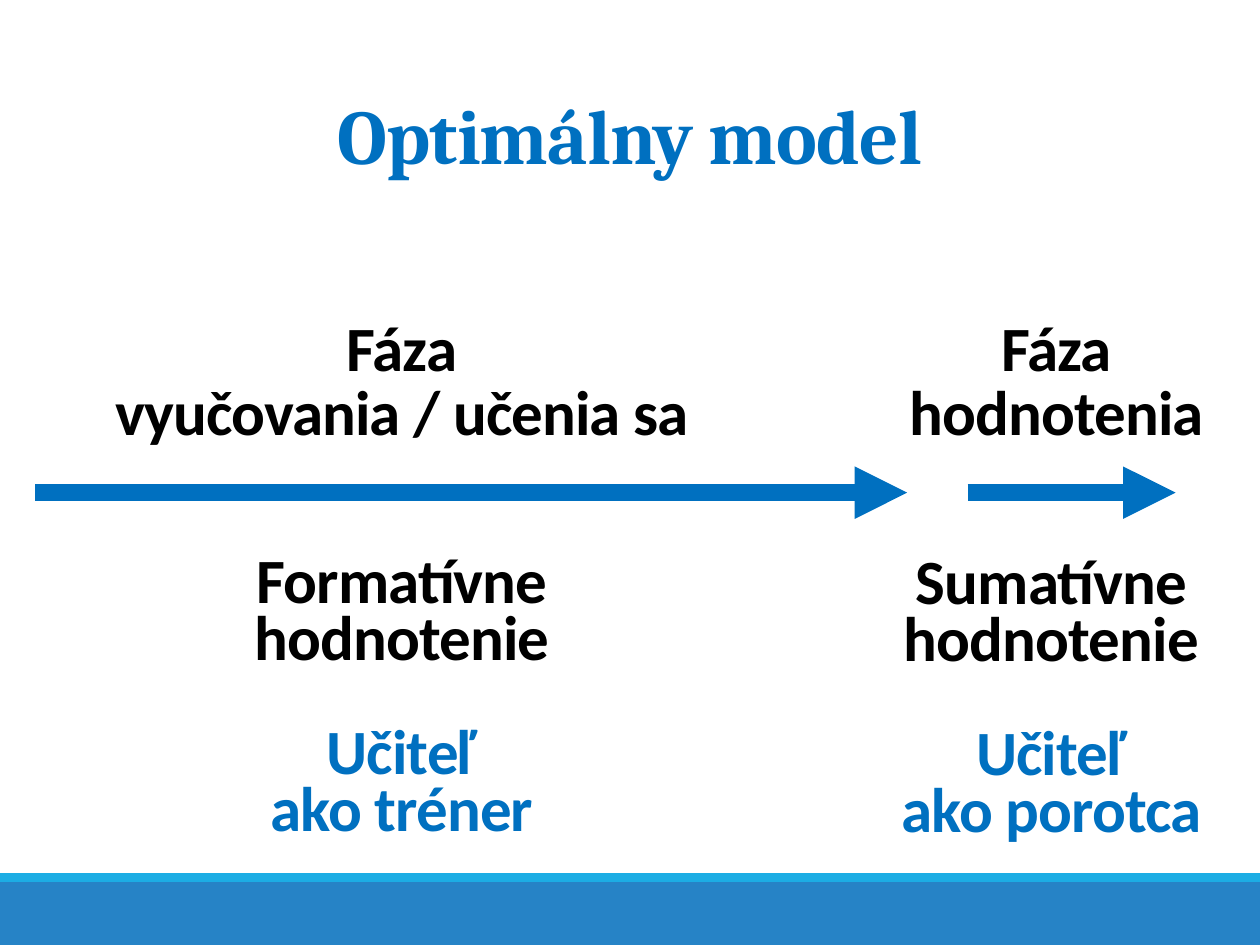
from lxml import etree
from pptx import Presentation
from pptx.dml.color import RGBColor
from pptx.enum.shapes import MSO_CONNECTOR, MSO_SHAPE
from pptx.enum.text import MSO_ANCHOR, PP_ALIGN
from pptx.oxml.ns import qn
from pptx.util import Inches, Pt

RECTANGLE = MSO_SHAPE.RECTANGLE
STRAIGHT = MSO_CONNECTOR.STRAIGHT
TOP = MSO_ANCHOR.TOP
CENTER = PP_ALIGN.CENTER

COLORS = {"accent": "0070C0", "text": "000000", "footer": "2683C6", "stripe": "1CADE4"}
COLUMNS, ROWS = 100, 75


class ModelSlide:
    def __init__(self, deck):
        self.page = deck.slides.add_slide(deck.slide_layouts[6])
        self.column = deck.slide_width / COLUMNS
        self.row = deck.slide_height / ROWS

    def place(self, left, top, width, height):
        return (round(left * self.column), round(top * self.row),
                round(width * self.column), round(height * self.row))

    def color(self, name):
        return RGBColor.from_string(COLORS[name])

    def bar(self, top, height, color):
        bar = self.page.shapes.add_shape(RECTANGLE, *self.place(0, top, COLUMNS, height))
        bar.shadow.inherit = False
        bar.fill.solid()
        bar.fill.fore_color.rgb = self.color(color)
        bar.line.fill.background()

    def arrow(self, start, end, row):
        arrow = self.page.shapes.add_connector(
            STRAIGHT, *self.place(start, row, end, row))
        arrow.line.color.rgb = self.color("accent")
        arrow.line.width = Pt(10)
        etree.SubElement(arrow.line._get_or_add_ln(), qn("a:tailEnd"), type="triangle")
        etree.SubElement(arrow._element.spPr, qn("a:effectLst"))

    def text(self, area, blocks, size=36, font="Calibri", spacing=0.85, gap=0):
        box = self.page.shapes.add_textbox(*self.place(*area))
        frame = box.text_frame
        frame.word_wrap = True
        frame.vertical_anchor = TOP
        for index, (lines, color) in enumerate(blocks):
            para = frame.add_paragraph() if index else frame.paragraphs[0]
            para.alignment = CENTER
            para.line_spacing = spacing
            para.space_before = Pt(gap if index else 0)
            for number, line in enumerate(lines):
                if number:
                    para.add_line_break()
                self.span(para, line, size, font, color)

    def span(self, para, line, size, font, color):
        span = para.add_run()
        span.text = line
        span.font.size = Pt(size)
        span.font.name = font
        span.font.bold = True
        span.font.color.rgb = self.color(color)
        span._r.get_or_add_rPr().set("spc", "-50")


def main():
    deck = Presentation()
    deck.slide_width, deck.slide_height = Inches(10), Inches(7.5)
    slide = ModelSlide(deck)
    slide.bar(70, 5, "footer")
    slide.bar(69.3, 0.7, "stripe")
    slide.text((0, 7.6, 100, 10.9), [(["Optimálny model"], "accent")], 44, "Cambria")

    for start, end in ((2.8, 72), (76.8, 93.3)):
        slide.arrow(start, end, 39.1)

    phases = (
        ((6.7, 24.9, 50.4, 12.6), ["Fáza", "vyučovania / učenia sa"]),
        ((63.4, 24.9, 40.9, 12.6), ["Fáza", "hodnotenia"]),
    )
    for area, lines in phases:
        slide.text(area, [(lines, "text")])

    roles = (
        ((6.7, 43.8, 50.4, 26), "Formatívne", "ako tréner"),
        ((68.1, 43.9, 30.7, 24.3), "Sumatívne", "ako porotca"),
    )
    for area, kind, role in roles:
        blocks = [([kind, "hodnotenie"], "text"), (["Učiteľ", role], "accent")]
        slide.text(area, blocks, spacing=0.75, gap=33)

    deck.save("out.pptx")


if __name__ == "__main__":
    main()
